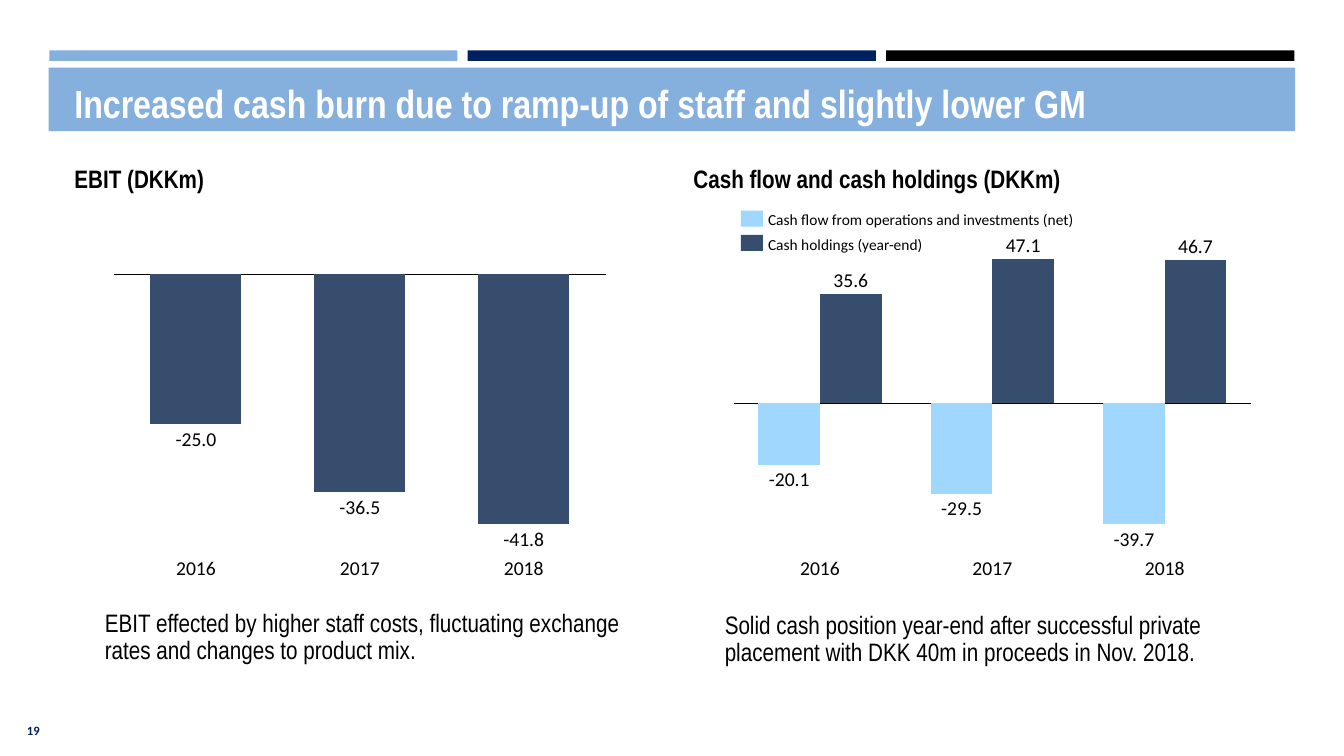
"""Build the slide on EBIT, cash flow and cash holdings."""
from dataclasses import dataclass

import lxml.etree
import pptx
import pptx.chart.data
import pptx.dml.color
import pptx.enum.chart
import pptx.enum.shapes
import pptx.enum.text
import pptx.util
from pptx.oxml.ns import qn

Pt = pptx.util.Pt
Align = pptx.enum.text.PP_ALIGN
Anchor = pptx.enum.text.MSO_ANCHOR
ChartType = pptx.enum.chart.XL_CHART_TYPE

SKY, NAVY, BLACK, WHITE = "85AFDD", "002060", "000000", "FFFFFF"
LIGHT, DARK = "9FD7FF", "364D6E"
NARROW, CALIBRI = "Arial Narrow", "Calibri"
YEARS = ("2016", "2017", "2018")
GAP_WIDTH = 80
LABEL_WIDTH, LABEL_HEIGHT = 32.4, 16.6
YEAR_TOP = 397.4


@dataclass(frozen=True)
class Area:
    left: float
    top: float
    width: float
    height: float


@dataclass(frozen=True)
class Style:
    size: float
    font: str = CALIBRI
    color: str = BLACK
    bold: bool = False
    align: Align = Align.LEFT
    anchor: Anchor = Anchor.TOP
    insets: tuple[float, float, float, float] = (0, 0, 0, 0)
    wrap: bool = True
    line_spacing: float = 1.0


@dataclass(frozen=True)
class BarSeries:
    name: str
    values: tuple[int, ...]
    color: str
    labels: tuple[str, ...]
    label_tops: tuple[float, ...]
    label_anchor: Anchor = Anchor.TOP


@dataclass(frozen=True)
class Panel:
    heading: str
    heading_left: float
    area: Area
    plot: tuple[float, float, float, float]
    kind: ChartType
    overlap: int
    minimum: float
    maximum: float
    series: tuple[BarSeries, ...]
    comment: str
    comment_top: float


PADDING = (7.2, 3.6, 7.2, 3.6)
TITLE = Style(28, NARROW, WHITE, True, anchor=Anchor.BOTTOM, insets=PADDING)
HEADING = Style(18, NARROW, bold=True, insets=PADDING)
COMMENT = Style(18, NARROW, insets=(0, 5, 0, 0), line_spacing=0.9)
PAGE_NUMBER = Style(9, color=NAVY, bold=True, anchor=Anchor.MIDDLE, insets=PADDING)
LEGEND = Style(11, anchor=Anchor.MIDDLE, wrap=False)

EBIT = Panel(
    "EBIT (DKKm)", 46.1, Area(74.9, 189.4, 364.3, 191.5),
    (0.018, 0.034, 0.964, 0.932), ChartType.COLUMN_STACKED, 100, -100, 0,
    (BarSeries("EBIT", (-60, -87, -100), DARK,
               ("-25.0", "-36.5", "-41.8"), (304.6, 353.5, 376.6)),),
    "EBIT effected by higher staff costs, fluctuating exchange rates "
    "and changes to product mix.", 431.3)
CASH = Panel(
    "Cash flow and cash holdings (DKKm)", 488.2, Area(517.7, 178.6, 382.3, 202.3),
    (0.017, 0.032, 0.966, 0.936), ChartType.COLUMN_CLUSTERED, 0, -84, 100,
    (BarSeries("Cash flow from operations and investments (net)", (-43, -63, -84), LIGHT,
               ("-20.1", "-29.5", "-39.7"), (333.4, 354.2, 376.6)),
     BarSeries("Cash holdings (year-end)", (76, 100, 99), DARK,
               ("35.6", "47.1", "46.7"), (191.5, 166.3, 167), Anchor.BOTTOM)),
    "Solid cash position year-end after successful private placement "
    "with DKK 40m in proceeds in Nov. 2018.", 432.7)


def rgb(color: str) -> pptx.dml.color.RGBColor:
    """Turn a hex string into a colour."""
    return pptx.dml.color.RGBColor.from_string(color)


def points(area: Area) -> tuple[pptx.util.Length, ...]:
    """Give left, top, width and height as lengths."""
    return Pt(area.left), Pt(area.top), Pt(area.width), Pt(area.height)


def add_bar(page: pptx.slide.Slide, area: Area, color: str) -> None:
    """Draw a plain filled rectangle."""
    bar = page.shapes.add_shape(pptx.enum.shapes.MSO_SHAPE.RECTANGLE, *points(area))
    bar.shadow.inherit = False
    bar.fill.solid()
    bar.fill.fore_color.rgb = rgb(color)
    bar.line.fill.background()


def add_text(page: pptx.slide.Slide, area: Area, text: str, style: Style) -> None:
    """Write one paragraph in a text box."""
    frame = page.shapes.add_textbox(*points(area)).text_frame
    frame.word_wrap = style.wrap
    frame.vertical_anchor = style.anchor
    (frame.margin_left, frame.margin_top,
     frame.margin_right, frame.margin_bottom) = map(Pt, style.insets)
    para = frame.paragraphs[0]
    para.alignment = style.align
    para.line_spacing = style.line_spacing
    span = para.add_run()
    span.text = text
    span.font.size = Pt(style.size)
    span.font.name = style.font
    span.font.bold = style.bold
    span.font.color.rgb = rgb(style.color)


def add_label(page: pptx.slide.Slide, center: float, top: float, text: str,
              anchor: Anchor = Anchor.TOP) -> None:
    """Write a chart label centred on a position."""
    area = Area(center - LABEL_WIDTH / 2, top, LABEL_WIDTH, LABEL_HEIGHT)
    add_text(page, area, text, Style(14, align=Align.CENTER, anchor=anchor, wrap=False))


def set_plot_layout(chart: pptx.chart.chart.Chart, plot: tuple[float, ...]) -> None:
    """Fix the inner plot area as fractions of the chart."""
    plot_area = chart.plots[0]._element.getparent()
    for old in plot_area.findall(qn("c:layout")):
        plot_area.remove(old)
    layout = lxml.etree.Element(qn("c:layout"))
    manual = lxml.etree.SubElement(layout, qn("c:manualLayout"))
    settings = [("layoutTarget", "inner"), ("xMode", "edge"), ("yMode", "edge"),
                *zip("xywh", map(str, plot))]
    for tag, value in settings:
        lxml.etree.SubElement(manual, qn(f"c:{tag}")).set("val", value)
    plot_area.insert(0, layout)


def add_bar_chart(page: pptx.slide.Slide, panel: Panel) -> None:
    """Draw the column chart of a panel."""
    data = pptx.chart.data.CategoryChartData()
    data.categories = YEARS
    for series in panel.series:
        data.add_series(series.name, series.values)
    chart = page.shapes.add_chart(panel.kind, *points(panel.area), data).chart
    chart.has_title = False
    chart.has_legend = False
    chart.font.name = CALIBRI
    chart.font.size = Pt(10)
    chart.font.color.rgb = rgb(BLACK)
    columns = chart.plots[0]
    columns.gap_width = GAP_WIDTH
    columns.overlap = panel.overlap
    columns.vary_by_categories = False
    for drawn, series in zip(columns.series, panel.series):
        drawn.invert_if_negative = False
        drawn.format.fill.solid()
        drawn.format.fill.fore_color.rgb = rgb(series.color)
    years = chart.category_axis
    years.tick_label_position = pptx.enum.chart.XL_TICK_LABEL_POSITION.NONE
    years.major_tick_mark = pptx.enum.chart.XL_TICK_MARK.NONE
    years.format.line.color.rgb = rgb(BLACK)
    years.format.line.width = Pt(0.75)
    scale = chart.value_axis
    scale.minimum_scale, scale.maximum_scale = panel.minimum, panel.maximum
    scale.has_major_gridlines = False
    scale.visible = False
    set_plot_layout(chart, panel.plot)


def add_panel(page: pptx.slide.Slide, panel: Panel) -> None:
    """Draw a heading, its chart with labels, and the comment below."""
    area = panel.area
    add_text(page, Area(panel.heading_left, 113, 397.4, 43.2), panel.heading, HEADING)
    add_bar_chart(page, panel)
    step = area.width * panel.plot[2] / len(YEARS)
    first = area.left + area.width * panel.plot[0] + step / 2
    bar_width = step / (len(panel.series) + GAP_WIDTH / 100)
    for column, year in enumerate(YEARS):
        center = first + column * step
        add_label(page, center, YEAR_TOP, year)
        for place, series in enumerate(panel.series):
            shift = (place - (len(panel.series) - 1) / 2) * bar_width
            add_label(page, center + shift, series.label_tops[column],
                      series.labels[column], series.label_anchor)
    add_text(page, Area(area.left, panel.comment_top, max(area.width, 377.3), 71.3),
             panel.comment, COMMENT)


def main() -> None:
    """Build and save the deck."""
    deck = pptx.Presentation()
    deck.slide_width, deck.slide_height = Pt(960), Pt(540)
    page = deck.slides.add_slide(deck.slide_layouts[6])
    for place, color in enumerate((SKY, NAVY, BLACK)):
        add_bar(page, Area(35.2 + place * 298.9, 36, 291.6, 7.5), color)
    add_bar(page, Area(34.8, 48.4, 890.4, 45.2), SKY)
    add_text(page, Area(46.1, 48.4, 868.3, 45.2),
             "Increased cash burn due to ramp-up of staff and slightly lower GM", TITLE)
    for panel in (EBIT, CASH):
        add_panel(page, panel)
    for row, series in enumerate(CASH.series):
        top = 150.5 + row * 17.3
        add_bar(page, Area(529.2, top, 15.8, 11.5), series.color)
        add_text(page, Area(548.6, top, 219.6, 13), series.name, LEGEND)
    add_text(page, Area(12.2, 507.6, 82.8, 28.8), "19", PAGE_NUMBER)
    deck.save("out.pptx")


if __name__ == "__main__":
    main()
